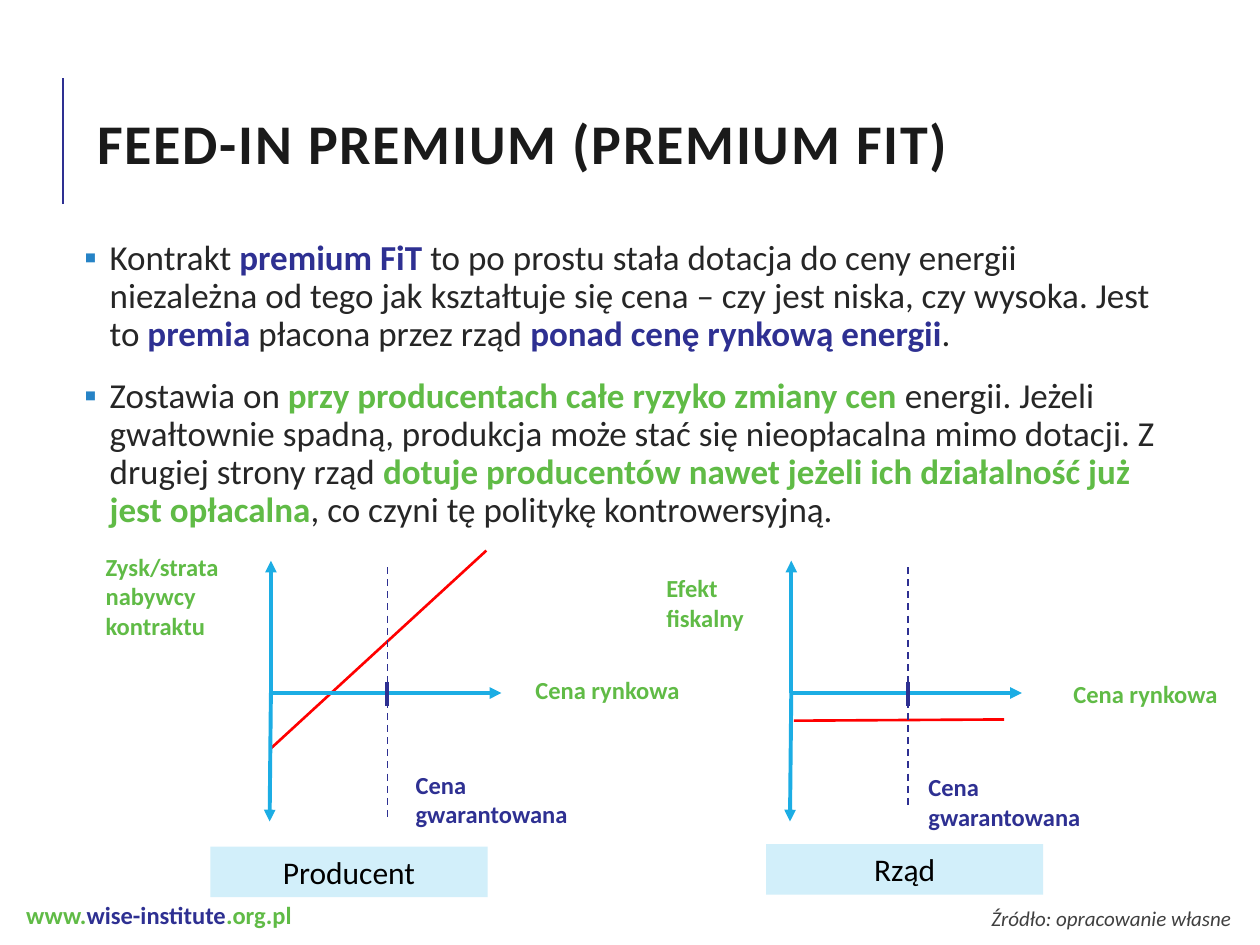
from dataclasses import dataclass

from lxml.etree import SubElement
from pptx import Presentation
from pptx.dml.color import RGBColor
from pptx.enum.dml import MSO_LINE
from pptx.enum.shapes import MSO_CONNECTOR, MSO_SHAPE
from pptx.enum.text import MSO_ANCHOR, MSO_AUTO_SIZE, PP_ALIGN
from pptx.oxml.ns import qn
from pptx.util import Inches, Pt


@dataclass(frozen=True)
class Theme:
    font: str = "Calibri"
    navy: str = "2E3092"
    green: str = "60BB46"
    axis: str = "1CADE4"
    payoff: str = "FF0000"
    panel: str = "D2EFFA"
    bullet: str = "2683C6"
    heading: str = "1A1A1A"
    body: str = "262626"
    black: str = "000000"
    grey: str = "404040"
    title_size: int = 32
    body_size: int = 20
    caption_size: int = 18
    label_size: int = 14
    source_size: int = 12


THEME = Theme()


def add_text(paragraph, text, *, size, color, bold=False, italic=False, spacing=None):
    """Append one formatted run to a paragraph."""
    run = paragraph.add_run()
    run.text = text
    font = run.font
    font.name, font.size = THEME.font, Pt(size)
    font.bold, font.italic = bold, italic
    font.color.rgb = RGBColor.from_string(color)
    if spacing:
        font._element.set("spc", str(spacing * 100))


class SlideBuilder:
    def __init__(self, slide, theme):
        self.slide = slide
        self.theme = theme

    def place(self, shape, box):
        shape.left, shape.top, shape.width, shape.height = map(Inches, box)

    def title(self, text, box):
        heading = self.slide.shapes.title
        self.place(heading, box)
        frame = heading.text_frame
        frame.vertical_anchor = MSO_ANCHOR.MIDDLE
        frame.auto_size = MSO_AUTO_SIZE.NONE
        paragraph = frame.paragraphs[0]
        paragraph.alignment = PP_ALIGN.LEFT
        paragraph.line_spacing = 0.8
        add_text(paragraph, text, size=self.theme.title_size,
                 color=self.theme.heading, bold=True, spacing=1)

    def bullets(self, items, box):
        """Each item is a list of (text, highlight colour or None)."""
        body = self.slide.placeholders[1]
        self.place(body, box)
        frame = body.text_frame
        frame.auto_size = MSO_AUTO_SIZE.NONE
        frame.margin_left = frame.margin_right = Inches(0.05)
        frame.margin_top = frame.margin_bottom = Inches(0.05)
        for index, parts in enumerate(items):
            paragraph = frame.add_paragraph() if index else frame.paragraphs[0]
            properties = paragraph._p.get_or_add_pPr()
            properties.set("marL", str(Inches(0.2)))
            properties.set("indent", str(-Inches(0.2)))
            color = SubElement(properties, qn("a:buClr"))
            SubElement(color, qn("a:srgbClr"), val=self.theme.bullet)
            SubElement(properties, qn("a:buFont"), typeface=self.theme.font)
            SubElement(properties, qn("a:buChar"), char="▪")
            paragraph.line_spacing = 0.9
            paragraph.space_before = Pt(12 if index else 0)
            paragraph.space_after = Pt(2)
            for text, highlight in parts:
                add_text(paragraph, text, size=self.theme.body_size,
                         color=highlight or self.theme.body, bold=bool(highlight))

    def label(self, paragraphs, box, *, wrap=True, align=PP_ALIGN.LEFT, **style):
        """Each paragraph is a list of (text, colour)."""
        frame = self.slide.shapes.add_textbox(*map(Inches, box)).text_frame
        frame.word_wrap = wrap
        frame.auto_size = MSO_AUTO_SIZE.SHAPE_TO_FIT_TEXT
        style = {"size": self.theme.label_size, "bold": True} | style
        for index, parts in enumerate(paragraphs):
            paragraph = frame.add_paragraph() if index else frame.paragraphs[0]
            paragraph.alignment = align
            for text, color in parts:
                add_text(paragraph, text, color=color, **style)

    def caption(self, text, box):
        banner = self.slide.shapes.add_shape(MSO_SHAPE.RECTANGLE, *map(Inches, box))
        banner.shadow.inherit = False
        banner.fill.solid()
        banner.fill.fore_color.rgb = RGBColor.from_string(self.theme.panel)
        banner.line.fill.background()
        paragraph = banner.text_frame.paragraphs[0]
        paragraph.alignment = PP_ALIGN.CENTER
        add_text(paragraph, text, size=self.theme.caption_size, color=self.theme.black)

    def line(self, start, end, color, width, *, arrow=False, dashed=False):
        connector = self.slide.shapes.add_connector(
            MSO_CONNECTOR.STRAIGHT, *map(Inches, (*start, *end)))
        connector.line.color.rgb = RGBColor.from_string(color)
        connector.line.width = Pt(width)
        if dashed:
            connector.line.dash_style = MSO_LINE.DASH
        if arrow:
            SubElement(connector.line._ln, qn("a:tailEnd"), type="triangle")
        SubElement(connector._element.spPr, qn("a:effectLst"))

    def payoff_diagram(self, left, payoff_start, payoff_end, guide_bottom):
        """Axes, payoff line and guaranteed-price guide, from the origin's x."""
        zero, guide = 5.5, left + 0.925
        self.line(payoff_start, payoff_end, self.theme.payoff, 1.5)
        for tip in ((left + 1.83, zero), (left, 4.45), (left - 0.01, 6.52)):
            self.line((left, zero), tip, self.theme.axis, 2.25, arrow=True)
        self.line((guide, 5.41), (guide, 5.6), self.theme.navy, 2.25)
        self.line((guide, 4.5), (guide, guide_bottom), self.theme.navy, 1, dashed=True)


def main():
    deck = Presentation()
    deck.slide_width, deck.slide_height = Inches(10), Inches(7.5)
    page = SlideBuilder(deck.slides.add_slide(deck.slide_layouts[1]), THEME)
    navy, green = THEME.navy, THEME.green

    # Frame: accent rule and web address
    page.line((0.5, 1.62), (0.5, 0.62), navy, 1.5)
    page.label([[("www.", green), ("wise-institute", navy), (".org.pl", green)]],
               (0.11, 7.09, 2.32, 0.34), wrap=False)

    # Title and main points
    page.title("FEED-IN PREMIUM (PREMIUM FIT)", (0.67, 0.62, 7.3, 1.11))
    page.bullets([
        [("Kontrakt ", None), ("premium FiT ", navy),
         ("to po prostu stała dotacja do ceny energii niezależna od tego jak "
          "kształtuje się cena – czy jest niska, czy wysoka. Jest to ", None),
         ("premia ", navy), ("płacona przez rząd ", None),
         ("ponad cenę rynkową energii", navy), (".", None)],
        [("Zostawia on ", None), ("przy producentach całe ryzyko zmiany cen ", green),
         ("energii. Jeżeli gwałtownie spadną, produkcja może stać się nieopłacalna "
          "mimo dotacji. Z drugiej strony rząd ", None),
         ("dotuje producentów nawet jeżeli ich działalność już jest opłacalna", green),
         (", co czyni tę politykę kontrowersyjną.", None)],
    ], (0.62, 1.86, 8.65, 4.5))

    # Producer and government diagrams
    page.payoff_diagram(2.15, (3.86, 4.37), (2.15, 5.94), guide_bottom=6.51)
    page.payoff_diagram(6.28, (7.97, 5.71), (6.3, 5.72), guide_bottom=6.39)

    # Diagram labels
    for lines, color, box in (
        (["Zysk/strata nabywcy kontraktu"], green, (0.74, 4.33, 1.58, 0.87)),
        (["Efekt", "fiskalny"], green, (5.19, 4.5, 1.28, 0.57)),
        (["Cena rynkowa"], green, (4.15, 5.31, 1.58, 0.36)),
        (["Cena rynkowa"], green, (8.42, 5.34, 1.58, 0.36)),
        (["Cena gwarantowana"], navy, (3.2, 6.06, 1.61, 0.62)),
        (["Cena gwarantowana"], navy, (7.27, 6.08, 1.61, 0.62)),
    ):
        page.label([[(text, color)] for text in lines], box)

    # Captions and source
    page.caption("Producent", (1.67, 6.72, 2.2, 0.4))
    page.caption("Rząd", (6.08, 6.7, 2.2, 0.4))
    page.label([[("Źródło: opracowanie własne", THEME.grey)]], (5.62, 7.14, 4.25, 0.3),
               align=PP_ALIGN.RIGHT, size=THEME.source_size, bold=False, italic=True)

    deck.save("out.pptx")


if __name__ == "__main__":
    main()
